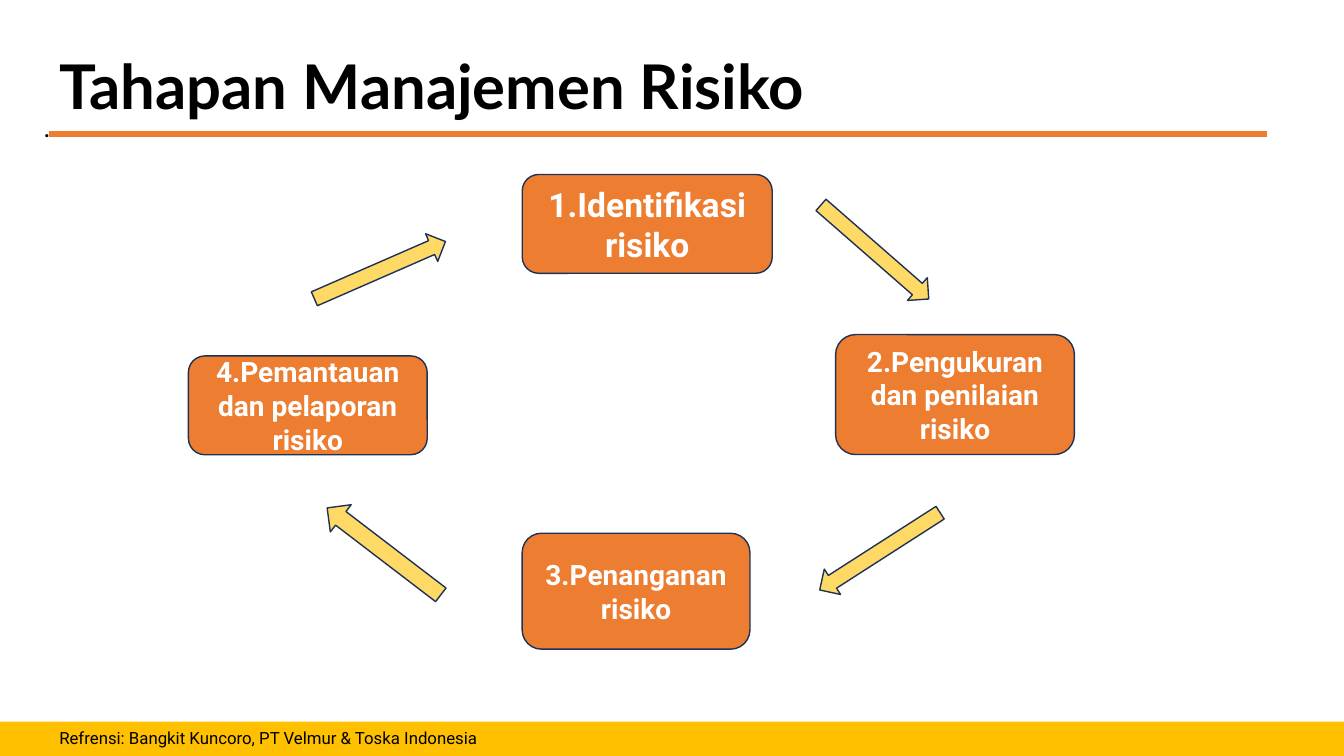
from pptx import Presentation
from pptx.dml.color import RGBColor
from pptx.enum.shapes import MSO_CONNECTOR as CONN, MSO_SHAPE as SHAPE
from pptx.enum.text import MSO_ANCHOR as ANCHOR, PP_ALIGN as ALIGN
from pptx.oxml.ns import qn
from pptx.util import Pt
from lxml.etree import SubElement

ORANGE = RGBColor(0xED, 0x7D, 0x31)
GOLD = RGBColor(0xFF, 0xC0, 0x00)
YELLOW = RGBColor(0xFF, 0xD9, 0x66)
NAVY = RGBColor(0x1E, 0x32, 0x56)
BLACK = RGBColor(0, 0, 0)
WHITE = RGBColor(0xFF, 0xFF, 0xFF)

# Label, font size, box within the cycle
STAGES = [
    ("1.Identifikasi risiko", 24, (238.4, 0, 178.6, 70.6)),
    ("2.Pengukuran dan penilaian risiko", 20, (462.3, 114.4, 170.6, 85.7)),
    ("3.Penanganan risiko", 20, (238.4, 256.3, 162.7, 82.8)),
    ("4.Pemantauan dan pelaporan risiko", 20, (0, 129.6, 170.6, 70.6)),
]
# Left, top, height, rotation within the cycle
ARROW_WIDTH = 102.2
ARROWS = [
    (439.2, 44.6, 21.6, 41.1),
    (442.8, 258.4, 21.6, 147.3),
    (88.6, 257, 24.5, 217.4),
    (85.7, 57.6, 21.6, 336.4),
]


def write(shape, text, size, color=BLACK, name="Roboto", bold=False,
          align=ALIGN.LEFT, anchor=ANCHOR.TOP):
    tf = shape.text_frame
    tf.word_wrap = True
    tf.vertical_anchor = anchor
    p = tf.paragraphs[0]
    p.alignment = align
    r = p.add_run()
    r.text = text
    for key, value in {"size": Pt(size), "name": name, "bold": bold}.items():
        setattr(r.font, key, value)
    r.font.color.rgb = color
    return p


def add_text(s, box, text, size, **style):
    return write(s.shapes.add_textbox(*map(Pt, box)), text, size, **style)


def add_block(s, kind, box, fill, outline=None):
    sp = s.shapes.add_shape(kind, *map(Pt, box))
    sp.shadow.inherit = False
    sp.fill.solid()
    sp.fill.fore_color.rgb = fill
    if outline is None:
        sp.line.fill.background()
    else:
        sp.line.color.rgb = outline
        sp.line.width = Pt(1)
    return sp


def add_footer(s, left, top, width, height):
    add_block(s, SHAPE.RECTANGLE, (left, top, width, height), GOLD)
    add_text(s, (left + 35.3, top + 0.7, 750, 21.6),
             "Refrensi: Bangkit Kuncoro, PT Velmur & Toska Indonesia", 12)


def add_header(s, left, top, width, height):
    p = add_text(s, (left, top, width, height), "Tahapan Manajemen Risiko", 44,
                 name="Lato", bold=True, anchor=ANCHOR.MIDDLE)
    p.line_spacing = 0.9
    # Small dot at the start of the rule
    add_text(s, (left - 11.5, top + 63, 891, 31), ".", 20)
    # Rule under the title
    y = top + 84.3
    rule = s.shapes.add_connector(CONN.STRAIGHT, Pt(left), Pt(y), Pt(left + 869.8), Pt(y))
    rule.line.color.rgb = ORANGE
    rule.line.width = Pt(4.5)
    SubElement(rule._element.spPr, qn("a:effectLst"))


def add_cycle(s, left, top):
    # Stages
    for label, size, (x, y, w, h) in STAGES:
        sp = add_block(s, SHAPE.ROUNDED_RECTANGLE, (left + x, top + y, w, h), ORANGE, NAVY)
        write(sp, label, size, color=WHITE, bold=True,
              align=ALIGN.CENTER, anchor=ANCHOR.MIDDLE)
    # Arrows between stages
    for x, y, h, angle in ARROWS:
        sp = add_block(s, SHAPE.RIGHT_ARROW, (left + x, top + y, ARROW_WIDTH, h), YELLOW, NAVY)
        sp.rotation = angle


def main():
    prs = Presentation()
    prs.slide_width, prs.slide_height = Pt(960), Pt(540)
    s = prs.slides.add_slide(prs.slide_layouts[6])
    add_footer(s, 0, 515.5, 960, 24.5)
    add_header(s, 35.3, 11.5, 828, 104.4)
    add_cycle(s, 134.6, 124.6)
    prs.save("out.pptx")


if __name__ == "__main__":
    main()
